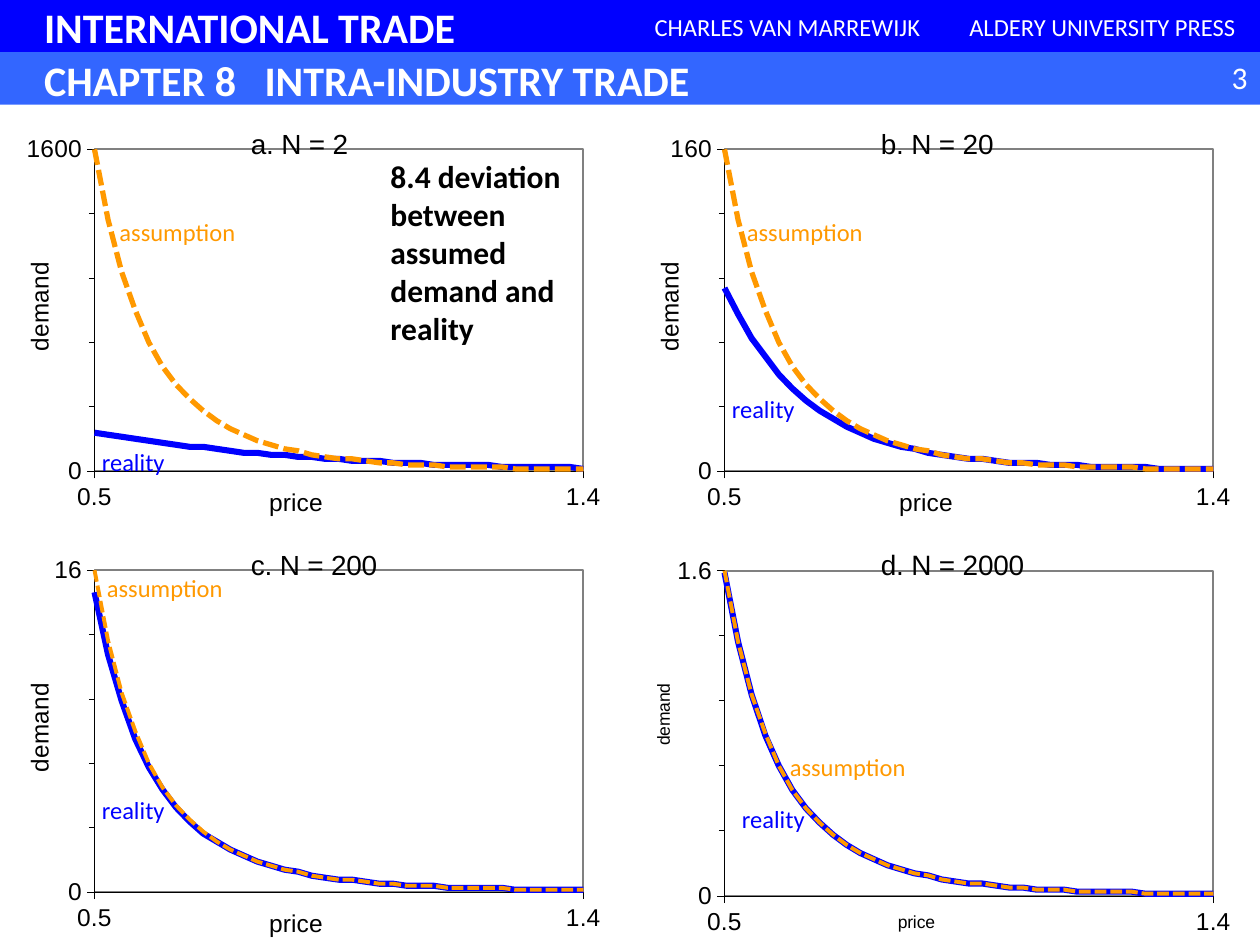
from dataclasses import dataclass

from lxml.etree import SubElement
from pptx import Presentation
from pptx.chart.data import XyChartData
from pptx.dml.color import RGBColor
from pptx.enum.chart import XL_AXIS_CROSSES, XL_CHART_TYPE, XL_TICK_MARK
from pptx.enum.dml import MSO_LINE
from pptx.enum.shapes import MSO_SHAPE
from pptx.enum.text import MSO_ANCHOR, PP_ALIGN
from pptx.oxml import parse_xml
from pptx.oxml.ns import nsdecls, qn
from pptx.util import Inches, Pt


@dataclass(frozen=True)
class Theme:
    blue: RGBColor = RGBColor(0x00, 0x00, 0xFF)
    light_blue: RGBColor = RGBColor(0x33, 0x66, 0xFF)
    orange: RGBColor = RGBColor(0xFF, 0x99, 0x00)
    black: RGBColor = RGBColor(0x00, 0x00, 0x00)
    white: RGBColor = RGBColor(0xFF, 0xFF, 0xFF)
    gray: RGBColor = RGBColor(0x80, 0x80, 0x80)
    text_font: str = "Calibri"
    chart_font: str = "Arial"
    heading: int = 24
    body: int = 18
    chart_title: int = 16
    label: int = 14
    small: int = 10


THEME = Theme()
PRICES = [(500 + 25 * step) / 1000 for step in range(37)]

# firms, decimals, left, top, axis title size, dash width, "assumption" at, "reality" at
PANELS = [
    ("a", 2, -1, 0, 0.83, THEME.label, 3, (0.85, 1.67), (0.71, 3.5)),
    ("b", 20, 0, 5, 0.83, THEME.label, 3, (5.83, 1.67), (5.71, 3.08)),
    ("c", 200, 1, 0, 4.17, THEME.label, 2.25, (0.75, 4.5), (0.71, 6.26)),
    ("d", 2000, 2, 5, 4.17, THEME.small, 2.25, (6.17, 5.92), (5.79, 6.33)),
]


def assumed_demand(price, firms):
    return 100 * price ** -5 / firms


def real_demand(price, firms):
    """Demand when the firm's own price also moves the price index."""
    return 100 * price ** -5 / (price ** -4 + firms - 1)


def apply(target, values):
    for name, value in values.items():
        setattr(target, name, value)


def style_font(font, size, color, name=THEME.text_font, bold=False):
    apply(font, {"size": Pt(size), "name": name, "bold": bold})
    font.color.rgb = color


def write(shape, text, size, color, bold=False, align=PP_ALIGN.LEFT):
    para = shape.text_frame.paragraphs[0]
    para.alignment = align
    span = para.add_run()
    span.text = text
    style_font(span.font, size, color, bold=bold)
    return para


def add_band(page, box, color, text, size, bold=False, align=PP_ALIGN.LEFT, indent=0.1):
    shape = page.shapes.add_shape(MSO_SHAPE.RECTANGLE, *map(Inches, box))
    shape.shadow.inherit = False
    shape.fill.solid()
    shape.fill.fore_color.rgb = color
    shape.line.color.rgb = color
    shape.line.width = Pt(0.75)
    apply(shape.text_frame, {"margin_left": Inches(indent), "word_wrap": True,
                             "vertical_anchor": MSO_ANCHOR.MIDDLE})
    return write(shape, text, size, color=THEME.white, bold=bold, align=align)


def add_text(page, box, text, size, color, wrap=True, **style):
    shape = page.shapes.add_textbox(*map(Inches, box))
    shape.text_frame.word_wrap = wrap
    return write(shape, text, size, color, **style)


def add_tab_stop(para, inches):
    stops = SubElement(para._p.get_or_add_pPr(), qn("a:tabLst"))
    SubElement(stops, qn("a:tab"), pos=str(Inches(inches)), algn="l")


def set_layout(element, index, **values):
    """Give a chart part a manual layout, in fractions of the chart."""
    layout = element.find(qn("c:layout"))
    if layout is None:
        layout = element.makeelement(qn("c:layout"))
        element.insert(index, layout)
    for child in list(layout):
        layout.remove(child)
    manual = SubElement(layout, qn("c:manualLayout"))
    for name, value in values.items():
        SubElement(manual, qn("c:" + name), val=str(value))


def shape_properties(fill, line):
    return parse_xml(f"<c:spPr {nsdecls('c', 'a')}>{fill}{line}</c:spPr>")


def set_title(owner, text, size, x, y):
    """Title a chart or an axis at a fixed place."""
    title = owner.chart_title if hasattr(owner, "chart_title") else owner.axis_title
    span = title.text_frame.paragraphs[0].add_run()
    span.text = text
    style_font(span.font, size, THEME.black, THEME.chart_font)
    set_layout(title._element, 1, xMode="edge", yMode="edge", x=x, y=y)
    return title


def style_axis(axis, low, high, minor_tick):
    apply(axis, {
        "minimum_scale": low, "maximum_scale": high,
        "major_unit": round(high - low, 2), "minor_unit": round((high - low) / 5, 2),
        "has_major_gridlines": False, "has_minor_gridlines": False,
        "major_tick_mark": XL_TICK_MARK.OUTSIDE, "minor_tick_mark": minor_tick,
        "crosses": XL_AXIS_CROSSES.MINIMUM,
    })
    apply(axis.tick_labels, {"number_format": "General", "number_format_is_linked": False})
    style_font(axis.tick_labels.font, THEME.label, THEME.black, THEME.chart_font)
    axis.format.line.color.rgb = THEME.black
    axis.format.line.width = Pt(0.25)


def style_curve(curve, color, width, dash=None):
    curve.smooth = True
    line = curve.format.line
    line.color.rgb = color
    apply(line, {"width": Pt(width), "dash_style": dash})


def add_demand_chart(page, letter, firms, decimals, left, top, title_size, dash_width):
    data = XyChartData()
    for name, demand in (("Series 1", assumed_demand), ("Series 2", real_demand)):
        points = data.add_series(name)
        for price in PRICES:
            points.add_data_point(price, round(demand(price, firms), decimals))
    chart = page.shapes.add_chart(XL_CHART_TYPE.XY_SCATTER_SMOOTH_NO_MARKERS,
                                  *map(Inches, (left, top, 5, 3.33)), data).chart
    chart.has_legend = False
    style_font(chart.font, THEME.label, THEME.black, THEME.chart_font)

    title = set_title(chart, f"{letter}. N = {firms}", THEME.chart_title, 0.39, 0.04)
    title._element.find(qn("c:overlay")).set("val", "1")
    style_axis(chart.category_axis, 0.5, 1.4, XL_TICK_MARK.NONE)
    style_axis(chart.value_axis, 0, 3200 / firms, XL_TICK_MARK.OUTSIDE)
    set_title(chart.category_axis, "price", title_size, 0.42, 0.91)
    demand_title = set_title(chart.value_axis, "demand", title_size, 0.03, 0.37)
    body = demand_title._element.find(".//" + qn("a:bodyPr"))
    body.set("rot", "-5400000")
    body.set("vert", "horz")

    plot = chart.plots[0]
    plot.vary_by_categories = False
    assumption, reality = plot.series
    style_curve(assumption, THEME.orange, dash_width, MSO_LINE.SQUARE_DOT)
    style_curve(reality, THEME.blue, 3.5)

    space = chart._chartSpace
    area = space.chart.plotArea
    set_layout(area, 0, layoutTarget="inner", xMode="edge", yMode="edge",
               x=0.15, y=0.108, w=0.776, h=0.775)
    solid = "<a:solidFill><a:srgbClr val='{}'/></a:solidFill>"
    area.append(shape_properties(
        "<a:noFill/>", f"<a:ln w='{Pt(1)}'>{solid.format(THEME.gray)}</a:ln>"))
    space.chart.addnext(shape_properties(
        solid.format(THEME.white), "<a:ln><a:noFill/></a:ln>"))


def add_header(page):
    add_band(page, (0, 0, 10, 0.42), THEME.blue, "INTERNATIONAL TRADE",
             THEME.heading, bold=True, indent=0.35)
    for left, text in ((5, "CHARLES VAN MARREWIJK"), (7.5, "ALDERY UNIVERSITY PRESS")):
        add_band(page, (left, 0.01, 2.5, 0.41), THEME.blue, text, THEME.label,
                 align=PP_ALIGN.CENTER)
    chapter = add_band(page, (0, 0.42, 10, 0.42), THEME.light_blue,
                       "CHAPTER 8\tINTRA-INDUSTRY TRADE", THEME.heading,
                       bold=True, indent=0.35)
    add_tab_stop(chapter, 1.75)
    add_text(page, (9.33, 0.41, 0.67, 0.4), "3", THEME.body, THEME.white,
             align=PP_ALIGN.RIGHT)


def main():
    deck = Presentation()
    apply(deck, {"slide_width": Inches(10), "slide_height": Inches(7.5)})
    page = deck.slides.add_slide(deck.slide_layouts[6])
    add_header(page)
    for *panel, _, _ in PANELS:
        add_demand_chart(page, *panel)
    for *_, assumption_at, reality_at in PANELS:
        for place, width, text, color in ((assumption_at, 1.13, "assumption", THEME.orange),
                                          (reality_at, 0.71, "reality", THEME.blue)):
            label = add_text(page, (*place, width, 0.34), text, THEME.label, color, wrap=False)
            label.space_after = Pt(6)
    add_text(page, (3, 1.2, 1.62, 1.62), "8.4 deviation between assumed demand and reality",
             THEME.body, THEME.black, bold=True)
    deck.save("out.pptx")


if __name__ == "__main__":
    main()
